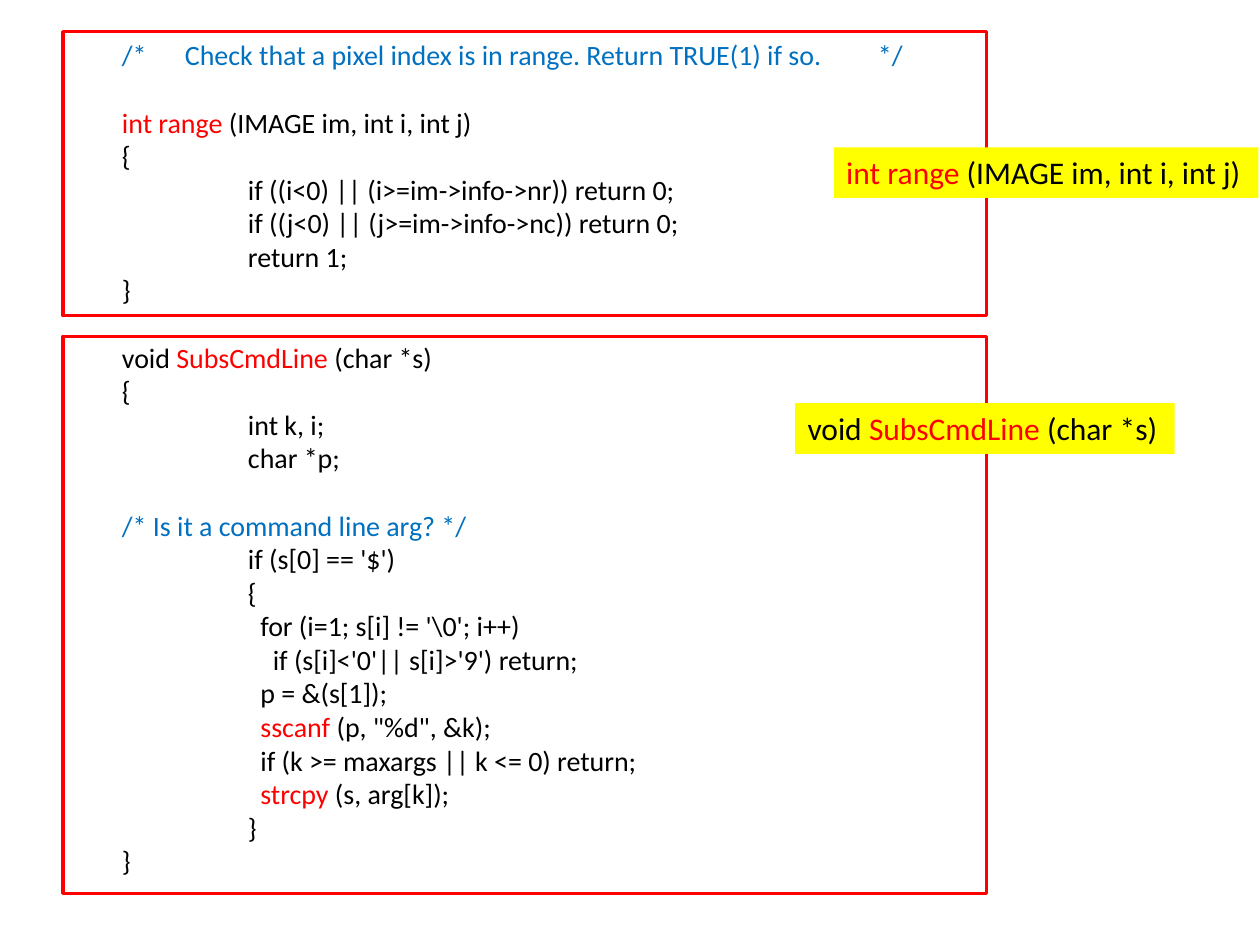
from typing import NamedTuple

from lxml.etree import SubElement
from pptx import Presentation
from pptx.dml.color import RGBColor
from pptx.enum.shapes import MSO_SHAPE
from pptx.enum.text import MSO_ANCHOR, MSO_AUTO_SIZE, PP_ALIGN
from pptx.oxml.ns import qn
from pptx.util import Cm, Pt

BLACK, RED, BLUE, YELLOW = "000000", "FF0000", "0070C0", "FFFF00"
BODY_SIZE, LABEL_SIZE = 16, 18
TAB, STEP = 2.54, 0.25
BLANK_LINE = 19.2


class Box(NamedTuple):
    """Position and size in centimetres."""
    left: float
    top: float
    width: float
    height: float


class Piece(NamedTuple):
    """Text in one colour."""
    text: str
    color: str = BLACK


class Line(NamedTuple):
    """A line of code with its indent in centimetres and the gap above in points."""
    pieces: tuple[Piece, ...]
    indent: float = 0
    gap: float = 0
    tabs: tuple[float, ...] = ()


class Label(NamedTuple):
    """A highlighted function signature."""
    box: Box
    pieces: tuple[Piece, ...]


RANGE = (Piece("int range ", RED), Piece("(IMAGE im, int i, int j)"))
SUBS = (Piece("void "), Piece("SubsCmdLine", RED), Piece(" (char *s)"))

CODE_BOX = Box(2.21, 0.64, 21.39, 17.86)
CODE = [
    Line((Piece("/*\tCheck that a pixel index is in range. Return TRUE(1) if so.\t*/", BLUE),),
         tabs=(1.25, 14.73)),
    Line(RANGE, gap=BLANK_LINE),
    Line((Piece("{"),)),
    Line((Piece("if ((i<0) || (i>=im->info->nr)) return 0;"),), TAB),
    Line((Piece("if ((j<0) || (j>=im->info->nc)) return 0;"),), TAB),
    Line((Piece("return 1;"),), TAB),
    Line((Piece("}"),)),
    Line(SUBS, gap=BLANK_LINE),
    Line((Piece("{"),)),
    Line((Piece("int k, i;"),), TAB),
    Line((Piece("char *p;"),), TAB),
    Line((Piece("/* Is it a command line arg? */", BLUE),), gap=BLANK_LINE),
    Line((Piece("if (s[0] == '$')"),), TAB),
    Line((Piece("{"),), TAB),
    Line((Piece(r"for (i=1; s[i] != '\0'; i++)"),), TAB + STEP),
    Line((Piece("if (s[i]<'0'|| s[i]>'9') return;"),), TAB + 2 * STEP),
    Line((Piece("p = &(s[1]);"),), TAB + STEP),
    Line((Piece("sscanf", RED), Piece(' (p, "%d", &k);')), TAB + STEP),
    Line((Piece("if (k >= maxargs || k <= 0) return;"),), TAB + STEP),
    Line((Piece("strcpy", RED), Piece(" (s, arg[k]);")), TAB + STEP),
    Line((Piece("}"),), TAB),
    Line((Piece("}"),)),
]
FRAMES = [Box(1.27, 0.64, 18.62, 5.72), Box(1.27, 6.78, 18.62, 11.23)]
LABELS = [
    Label(Box(16.81, 2.97, 8.56, 1.02), RANGE),
    Label(Box(16.03, 8.13, 7.65, 1.02), SUBS),
]


def rgb(color: str) -> RGBColor:
    """Turn a hex string into a colour."""
    return RGBColor.from_string(color)


def place(box: Box) -> list[int]:
    """Convert a box to slide lengths."""
    return [Cm(v) for v in box]


def write_pieces(p, pieces: tuple[Piece, ...], size: int) -> None:
    """Add coloured runs to a paragraph."""
    p.alignment = PP_ALIGN.LEFT
    for piece in pieces:
        r = p.add_run()
        r.text = piece.text
        r.font.name = "Calibri"
        r.font.size = Pt(size)
        r.font.color.rgb = rgb(piece.color)


def write_line(p, line: Line) -> None:
    """Write one line of code with its indent, gap and tab stops."""
    write_pieces(p, line.pieces, BODY_SIZE)
    p.space_before = Pt(line.gap)
    pPr = p._p.get_or_add_pPr()
    pPr.set("marL", str(Cm(line.indent)))
    pPr.set("indent", "0")
    if line.tabs:
        tabs = SubElement(pPr, qn("a:tabLst"))
        for pos in line.tabs:
            SubElement(tabs, qn("a:tab"), pos=str(Cm(pos)), algn="l")


def add_code(s, box: Box, lines: list[Line]) -> None:
    """Add the text box holding the code."""
    tf = s.shapes.add_textbox(*place(box)).text_frame
    tf.word_wrap = True
    tf.auto_size = MSO_AUTO_SIZE.SHAPE_TO_FIT_TEXT
    for i, line in enumerate(lines):
        write_line(tf.add_paragraph() if i else tf.paragraphs[0], line)


def add_frame(s, box: Box) -> None:
    """Add a red outline around one function."""
    sp = s.shapes.add_shape(MSO_SHAPE.RECTANGLE, *place(box))
    sp.shadow.inherit = False
    sp.fill.background()
    sp.line.color.rgb = rgb(RED)
    sp.line.width = Pt(2)


def add_label(s, label: Label) -> None:
    """Add a yellow signature label."""
    sp = s.shapes.add_shape(MSO_SHAPE.RECTANGLE, *place(label.box))
    sp.shadow.inherit = False
    sp.fill.solid()
    sp.fill.fore_color.rgb = rgb(YELLOW)
    sp.line.fill.background()
    tf = sp.text_frame
    tf.word_wrap = False
    tf.auto_size = MSO_AUTO_SIZE.SHAPE_TO_FIT_TEXT
    tf.vertical_anchor = MSO_ANCHOR.TOP
    write_pieces(tf.paragraphs[0], label.pieces, LABEL_SIZE)


def main() -> None:
    """Build and save the slide."""
    prs = Presentation()
    prs.slide_width, prs.slide_height = Cm(25.4), Cm(19.05)
    s = prs.slides.add_slide(prs.slide_layouts[6])
    add_code(s, CODE_BOX, CODE)
    for box in FRAMES:
        add_frame(s, box)
    for label in LABELS:
        add_label(s, label)
    prs.save("out.pptx")


if __name__ == "__main__":
    main()
